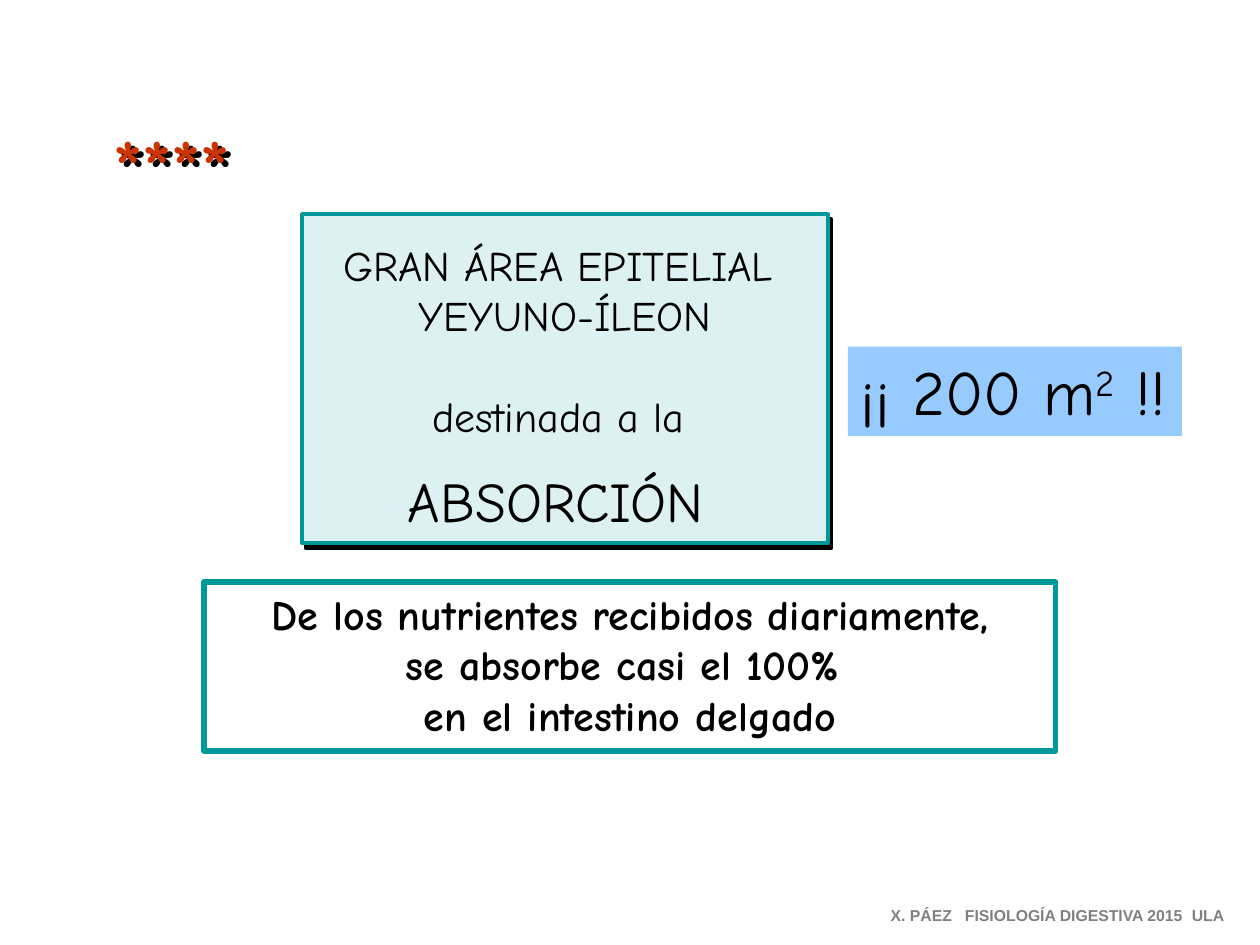
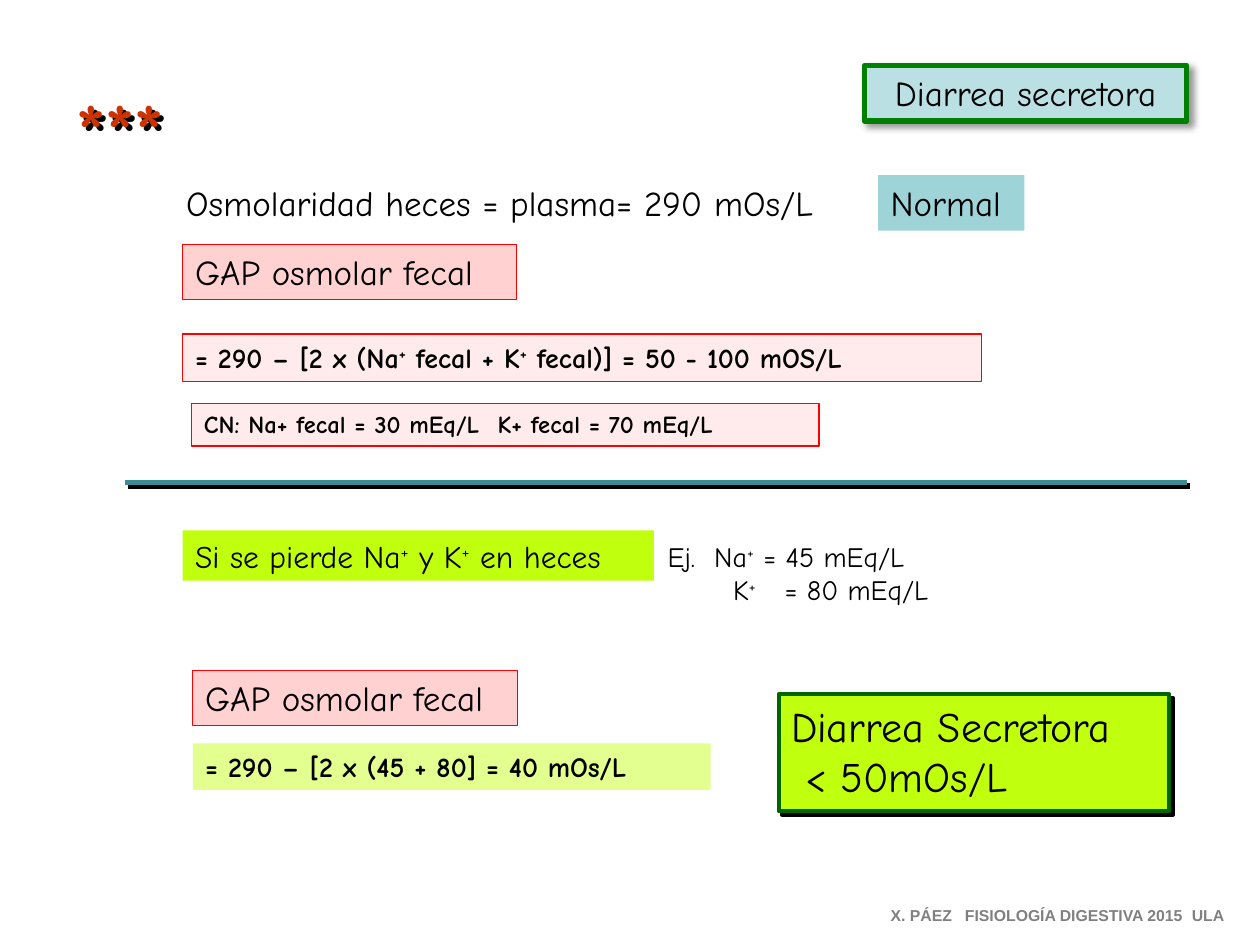
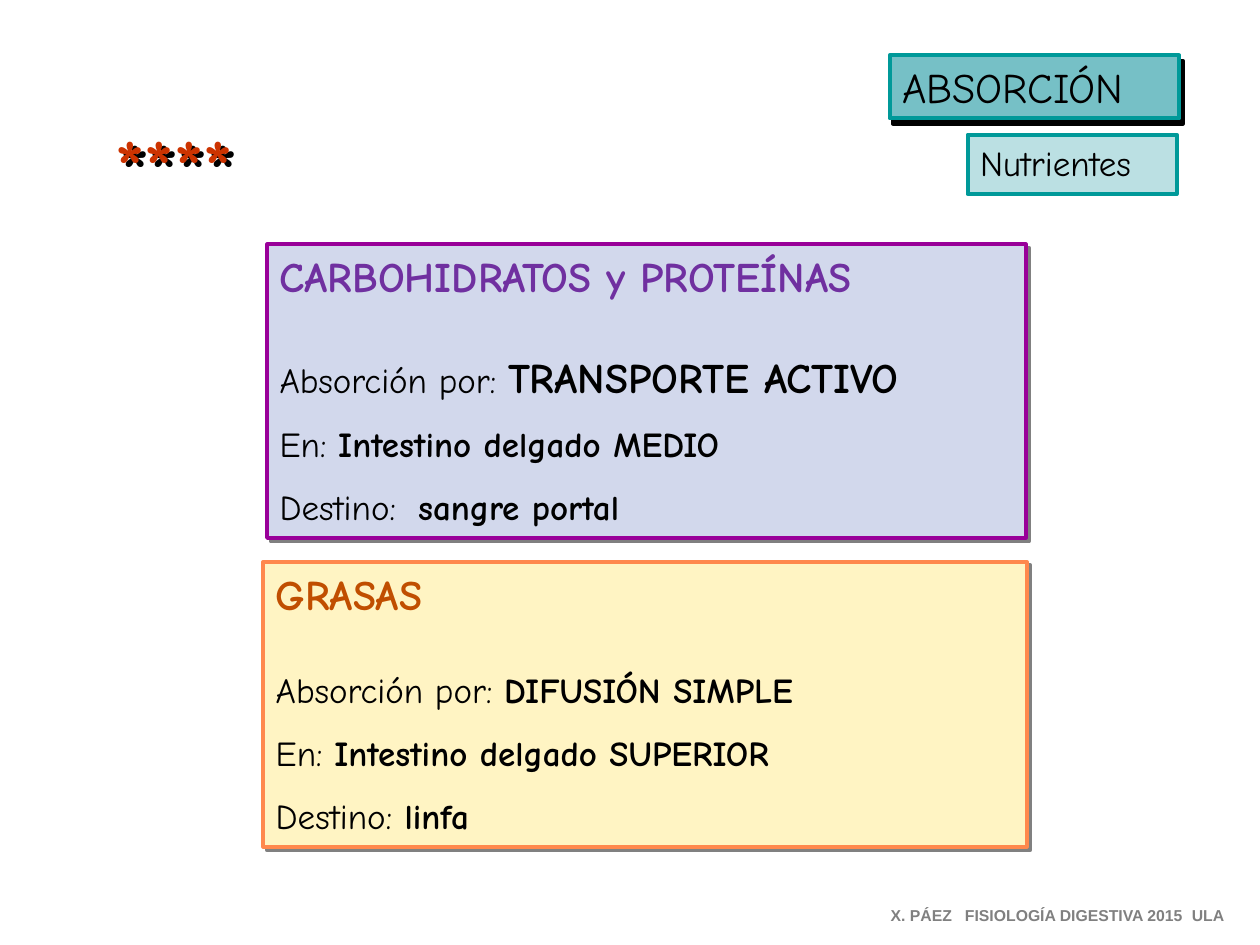
from pptx import Presentation
from pptx.dml.color import RGBColor
from pptx.enum.shapes import MSO_CONNECTOR, MSO_SHAPE
from pptx.enum.text import MSO_ANCHOR, MSO_AUTO_SIZE, PP_ALIGN
from pptx.oxml import parse_xml
from pptx.oxml.ns import nsdecls
from pptx.util import Inches, Pt

RECTANGLE = MSO_SHAPE.RECTANGLE
STRAIGHT = MSO_CONNECTOR.STRAIGHT
TOP = MSO_ANCHOR.TOP
NO_AUTOFIT = MSO_AUTO_SIZE.NONE
LEFT, CENTER = PP_ALIGN.LEFT, PP_ALIGN.CENTER

# The slide is a grid of 100 columns by 75 rows.
WIDTH, HEIGHT = Inches(10), Inches(7.5)
CELL = WIDTH // 100
TITLE_ONLY, BLANK = 5, 6

HAND, FOOTER_FONT = "Comic Neue", "Arial"
BLACK, GRAY, STAR_RED = "000000", "808080", "CC3300"
TEAL, PALE_TEAL, RED = "009999", "BBE0E3", "FF0000"
PINK, PALE_PINK, LIME = "FFD1D1", "FFEBEB", "C0FF0D"

# Shadows: colour, opacity %, blur pt, distance pt, direction in degrees
DEEP = (BLACK, 100, 0, 3.6, 56)
HARD = (BLACK, 100, 0, 2.8, 45)
STAR = (BLACK, 100, 0, 4, 45)
SOFT = (BLACK, 40, 4, 3, 45)
MUTED = (GRAY, 100, 0, 2.8, 45)

# Run formats
BOLD = {"bold": True}
PLUS = ("+", {"raised": True})


def rgb(value):
    return RGBColor.from_string(value)


def grid(*cells):
    return [round(cell * CELL) for cell in cells]


def set_shadow(shape, shadow):
    """Give a shape or connector this shadow only, or none at all."""
    outer = ""
    if shadow:
        color, opacity, blur, distance, angle = shadow
        outer = (f'<a:outerShdw blurRad="{Pt(blur)}" dist="{Pt(distance)}" '
                 f'dir="{angle * 60000}" algn="tl" rotWithShape="0">'
                 f'<a:srgbClr val="{color}"><a:alpha val="{opacity * 1000}"/>'
                 f'</a:srgbClr></a:outerShdw>')
    shape._element.spPr.append(
        parse_xml(f'<a:effectLst {nsdecls("a")}>{outer}</a:effectLst>'))


def set_tabs(paragraph, stops):
    tabs = "".join(f'<a:tab pos="{stop}" algn="l"/>' for stop in grid(*stops))
    paragraph._p.get_or_add_pPr().append(
        parse_xml(f'<a:tabLst {nsdecls("a")}>{tabs}</a:tabLst>'))


def para(*runs, before=0, tabs=(), **style):
    """Describe a paragraph; a run is a string or (string, format)."""
    return runs, before, tabs, style


def add_run(paragraph, text, size=20, color=BLACK, font=HAND, bold=False,
            raised=False):
    run = paragraph.add_run()
    run.text = text
    run.font.size = Pt(size)
    run.font.bold = bold
    run.font.color.rgb = rgb(color)
    run.font.name = font
    if raised:
        run._r.get_or_add_rPr().set("baseline", "30000")


def write(shape, paragraphs, align=LEFT, top=0.5, **style):
    frame = shape.text_frame
    frame.word_wrap = True
    frame.auto_size = NO_AUTOFIT
    frame.vertical_anchor = TOP
    frame.margin_left = frame.margin_right = CELL
    frame.margin_top, frame.margin_bottom = grid(top, 0.5)
    for index, (runs, before, tabs, own_style) in enumerate(paragraphs):
        paragraph = frame.add_paragraph() if index else frame.paragraphs[0]
        paragraph.alignment = align
        paragraph.space_before = Pt(before)
        if tabs:
            set_tabs(paragraph, tabs)
        for run in runs:
            text, run_style = (run, {}) if isinstance(run, str) else run
            add_run(paragraph, text, **{**style, **own_style, **run_style})


def dress(shape, fill=None, border=None, weight=2.25, shadow=None):
    if fill:
        shape.fill.solid()
        shape.fill.fore_color.rgb = rgb(fill)
    else:
        shape.fill.background()
    if border:
        shape.line.color.rgb = rgb(border)
        shape.line.width = Pt(weight)
    else:
        shape.line.fill.background()
    set_shadow(shape, shadow)


def add_panel(slide, cells, *paragraphs, fill=None, border=None, weight=2.25,
              shadow=None, **style):
    panel = slide.shapes.add_shape(RECTANGLE, *grid(*cells))
    dress(panel, fill, border, weight, shadow)
    write(panel, paragraphs, **style)


def add_text(slide, cells, *paragraphs, shadow=None, **style):
    label = slide.shapes.add_textbox(*grid(*cells))
    set_shadow(label, shadow)
    write(label, paragraphs, **style)


def set_title(slide, cells, text, fill, border, weight, shadow, **style):
    title = slide.shapes.title
    title.left, title.top, title.width, title.height = grid(*cells)
    dress(title, fill, border, weight, shadow)
    write(title, [para(text)], **style)


def add_stars(slide, left, top, count, shadow=STAR):
    add_text(slide, (left, top, 17, 8.4), para("*" * count), size=44,
             color=STAR_RED, bold=True, shadow=shadow)


def add_divider(slide, left, right, row):
    divider = slide.shapes.add_connector(
        STRAIGHT, *grid(left, row, right, row))
    divider.line.color.rgb = rgb("3C8C93")
    divider.line.width = Pt(3)
    set_shadow(divider, HARD)


def add_footer(slide):
    add_text(slide, (69.7, 71.4, 29.5, 2.5),
             para("X. PÁEZ\tFISIOLOGÍA DIGESTIVA 2015\tULA", tabs=(5.9, 23.9)),
             size=9, font=FOOTER_FONT, color=GRAY, bold=True)


def add_nutrient(slide, cells, name, name_color, transport, transport_size,
                 place, destination, **look):
    """Panel with a nutrient's way of absorption, place and destination."""
    add_panel(slide, cells,
              para(name, size=24, color=name_color, bold=True),
              para("Absorción por: ",
                   (transport, {"bold": True, "size": transport_size}),
                   before=28.8),
              para("En: ", ("Intestino delgado " + place, BOLD), before=12),
              destination, shadow=MUTED, **look)


def build_area(slide):
    add_panel(slide, (24, 17, 41.7, 26.1),
              para("GRAN ÁREA EPITELIAL "),
              para("YEYUNO-ÍLEON"),
              para("destinada a la ", before=28.8),
              para("ABSORCIÓN ", before=14.4, size=32),
              fill="DEF1F2", border=TEAL, shadow=DEEP, size=24,
              align=CENTER, top=2)
    add_panel(slide, (16.2, 46.2, 67.6, 13.4),
              para("De los nutrientes recibidos diariamente,"),
              para("se absorbe casi el 100% "),
              para("en el intestino delgado"),
              border=TEAL, weight=3, size=24, bold=True, align=CENTER)
    add_stars(slide, 8, 8.8, 4)
    add_panel(slide, (67.3, 27.5, 26.5, 7.1),
              para("¡¡ 200 m", ("2", {"raised": True}), " !!"),
              fill="97CBFF", size=36)


def build_secretory(slide):
    set_title(slide, (68.6, 5.2, 25.6, 4.4), "Diarrea secretora",
              PALE_TEAL, "008000", 3, SOFT, align=CENTER)
    add_stars(slide, 5.1, 6, 3, HARD)

    add_text(slide, (13.8, 13.9, 55, 4.3),
             para("Osmolaridad heces = plasma= 290 mOs/L"))
    add_panel(slide, (69.7, 13.9, 11.6, 4.4), para("Normal"), fill="9ED3D7")
    for cells in ((14.5, 19.4, 26.5, 4.4), (15.3, 53.2, 25.8, 4.4)):
        add_panel(slide, cells, para("GAP osmolar fecal"),
                  fill=PINK, border=RED, weight=0.75)
    add_panel(slide, (14.5, 26.5, 63.4, 3.8),
              para("= 290 – [2 x (Na", PLUS, " fecal + K", PLUS,
                   " fecal)] = 50 - 100 mOS/L"),
              fill=PALE_PINK, border=RED, weight=0.75, size=16, bold=True)
    add_panel(slide, (15.2, 32, 49.8, 3.4),
              para("CN: Na+ fecal = 30 mEq/L\tK+ fecal = 70 mEq/L",
                   tabs=(23.3,)),
              fill=PALE_PINK, border=RED, weight=0.75, size=14, bold=True)

    add_divider(slide, 9.9, 94.2, 38.3)

    add_panel(slide, (14.5, 42.1, 37.4, 4),
              para("Si se pierde Na", PLUS, " y K", PLUS, " en heces"),
              fill=LIME, size=18)
    add_text(slide, (52, 42.3, 23.4, 6.4),
             para("Ej.\tNa", PLUS, " = 45 mEq/L", tabs=(3.7,)),
             para("\tK", PLUS, "\t= 80 mEq/L", tabs=(5.2, 9.3)),
             size=16)
    add_panel(slide, (15.3, 59, 41.1, 3.7),
              para("= 290 – [2 x (45 + 80] = 40 mOs/L"),
              fill="E2FF8F", size=16, bold=True)
    add_panel(slide, (61.8, 55.1, 31, 9.3),
              para("Diarrea Secretora"), para(" < 50mOs/L"),
              fill=LIME, border="006600", shadow=HARD, size=24)


def build_nutrients(slide):
    set_title(slide, (70.6, 4.4, 23, 5), "ABSORCIÓN",
              "76C0C6", TEAL, 2.25, DEEP, size=24)
    add_panel(slide, (76.8, 10.7, 16.6, 4.7), para("Nutrientes"),
              fill=PALE_TEAL, border=TEAL)
    add_stars(slide, 8.2, 8.8, 4)
    add_nutrient(slide, (20.9, 44.6, 60.6, 22.6), "GRASAS", "C04E00",
                 "DIFUSIÓN SIMPLE", 20, "SUPERIOR",
                 para("Destino:", (" linfa", BOLD), before=12),
                 fill="FFF4C3", border="FF884D")
    add_nutrient(slide, (21.2, 19.4, 60.2, 23.3),
                 "CARBOHIDRATOS y PROTEÍNAS", "7030A0",
                 "TRANSPORTE ACTIVO", 24, "MEDIO",
                 para("Destino:\t", ("sangre portal", BOLD), before=12,
                      tabs=(11,)),
                 fill="D2D8EC", border="990099")


def main():
    deck = Presentation()
    deck.slide_width, deck.slide_height = WIDTH, HEIGHT
    for layout, build in ((BLANK, build_area), (TITLE_ONLY, build_secretory),
                          (TITLE_ONLY, build_nutrients)):
        slide = deck.slides.add_slide(deck.slide_layouts[layout])
        build(slide)
        add_footer(slide)
    deck.save("out.pptx")


if __name__ == "__main__":
    main()
